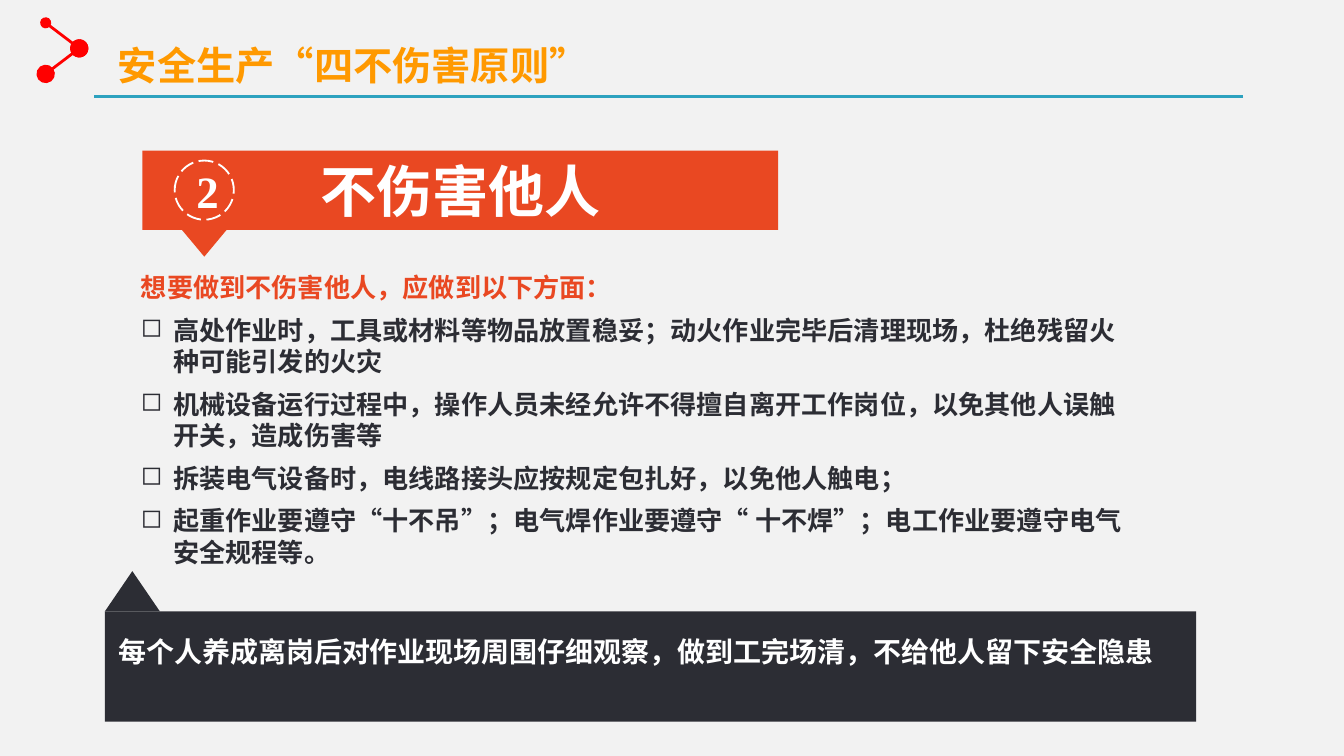
from lxml.etree import SubElement
from pptx import Presentation
from pptx.dml.color import RGBColor
from pptx.enum.dml import MSO_LINE
from pptx.enum.lang import MSO_LANGUAGE_ID as LANGUAGE
from pptx.enum.shapes import MSO_CONNECTOR, MSO_SHAPE as SHAPE
from pptx.enum.text import MSO_ANCHOR, MSO_AUTO_SIZE, PP_ALIGN
from pptx.oxml.ns import qn
from pptx.util import Inches, Pt

ORANGE = RGBColor(0xFF, 0x99, 0x00)
RED = RGBColor(0xFF, 0x00, 0x00)
VERMILION = RGBColor(0xE9, 0x48, 0x22)
CHARCOAL = RGBColor(0x2C, 0x2D, 0x34)
TEAL = RGBColor(0x2D, 0xA2, 0xBF)
WHITE = RGBColor(0xFF, 0xFF, 0xFF)
PALE = RGBColor(0xF2, 0xF2, 0xF2)

TITLE = "安全生产“四不伤害原则”"
NUMBER, HEADING = "2", "不伤害他人"
LEAD = "想要做到不伤害他人，应做到以下方面："
MEASURES = [
    "高处作业时，工具或材料等物品放置稳妥；动火作业完毕后清理现场，杜绝残留火种可能引发的火灾",
    "机械设备运行过程中，操作人员未经允许不得擅自离开工作岗位，以免其他人误触开关，造成伤害等",
    "拆装电气设备时，电线路接头应按规定包扎好，以免他人触电；",
    "起重作业要遵守“十不吊”；电气焊作业要遵守“ 十不焊”；电工作业要遵守电气安全规程等。",
]
REMINDER = "每个人养成离岗后对作业现场周围仔细观察，做到工完场清，不给他人留下安全隐患"

WIDTH = 10
HEIGHT = WIDTH * 9 / 16
LEFT = 0.78
BANNER = (1.06, 1.12, 4.73, 0.59)
FOOTER = (LEFT, 4.55, 8.12, 0.82)
BADGE_SIZE, BADGE_CENTER = 0.44, 1.52
POINTER_WIDTH, POINTER_HEIGHT = 0.35, 0.21
TAB_WIDTH, TAB_HEIGHT = 0.41, 0.3
MOLECULE = [(0.34, 0.17, "med"), (0.59, 0.36, "lg"), (0.34, 0.55, "lg")]


def add_line(slide, start, end, color):
    line = slide.shapes.add_connector(
        MSO_CONNECTOR.STRAIGHT, *map(Inches, (*start, *end)))
    line.line.color.rgb = color
    line.line.width = Pt(1.5)
    SubElement(line._element.spPr, qn("a:effectLst"))
    return line


def add_dots(line, sizes):
    """Put a round dot on each end of a line."""
    outline = line.line._get_or_add_ln()
    for tag, size in zip(("a:headEnd", "a:tailEnd"), sizes):
        SubElement(outline, qn(tag), type="oval", w=size, len=size)


def add_plain_shape(slide, kind, box, fill=None):
    shape = slide.shapes.add_shape(kind, *map(Inches, box))
    shape.shadow.inherit = False
    shape.line.fill.background()
    if fill is None:
        shape.fill.background()
    else:
        shape.fill.solid()
        shape.fill.fore_color.rgb = fill
    return shape


def write(paragraph, text, size, color, **layout):
    paragraph.text = text
    for name, value in layout.items():
        setattr(paragraph, name, value)
    font = paragraph.runs[0].font
    style = {"name": "Times New Roman", "size": Pt(size), "bold": True,
             "language_id": LANGUAGE.SIMPLIFIED_CHINESE}
    for name, value in style.items():
        setattr(font, name, value)
    font.color.rgb = color


def add_text_frame(slide, box):
    frame = slide.shapes.add_textbox(*map(Inches, box)).text_frame
    frame.word_wrap = True
    frame.auto_size = MSO_AUTO_SIZE.SHAPE_TO_FIT_TEXT
    return frame


def write_centered(shape, text, size, margin_left=0):
    frame = shape.text_frame
    frame.vertical_anchor = MSO_ANCHOR.MIDDLE
    frame.word_wrap = False
    frame.margin_left = Inches(margin_left)
    for side in ("top", "right", "bottom"):
        setattr(frame, f"margin_{side}", 0)
    write(frame.paragraphs[0], text, size, WHITE, alignment=PP_ALIGN.CENTER)


def add_bullet(paragraph, indent):
    properties = paragraph._p.get_or_add_pPr()
    properties.set("marL", str(indent))
    properties.set("indent", str(-indent))
    SubElement(properties, qn("a:buChar"), char="◻")


def add_header(slide):
    add_line(slide, (9.25, 0.72), (0.7, 0.72), TEAL)
    for (x1, y1, size1), (x2, y2, size2) in zip(MOLECULE, MOLECULE[1:]):
        add_dots(add_line(slide, (x1, y1), (x2, y2), RED), (size1, size2))
    frame = add_text_frame(slide, (LEFT, 0.08, 4.83, 0.63))
    write(frame.paragraphs[0], TITLE, 21, ORANGE, line_spacing=1.5)


def add_measures(slide):
    frame = add_text_frame(slide, (0.95, 1.97, 7.62, 2.32))
    write(frame.paragraphs[0], LEAD, 14, VERMILION)
    for measure in MEASURES:
        paragraph = frame.add_paragraph()
        add_bullet(paragraph, Inches(0.24))
        write(paragraph, measure, 14, CHARCOAL, space_before=Pt(6))


def add_footer(slide):
    left, top, width, _ = FOOTER
    add_plain_shape(slide, SHAPE.RECTANGLE, FOOTER, CHARCOAL)
    add_plain_shape(slide, SHAPE.ISOSCELES_TRIANGLE,
                    (left, top - TAB_HEIGHT, TAB_WIDTH, TAB_HEIGHT), CHARCOAL)
    frame = add_text_frame(slide, (left, top, width - 0.1, 0.48))
    write(frame.paragraphs[0], REMINDER, 15, WHITE, line_spacing=1.5)


def add_banner(slide):
    _, top, _, height = BANNER
    write_centered(add_plain_shape(slide, SHAPE.RECTANGLE, BANNER, VERMILION),
                   HEADING, 30)
    badge = add_plain_shape(
        slide, SHAPE.OVAL,
        (BADGE_CENTER - BADGE_SIZE / 2, top + (height - BADGE_SIZE) / 2,
         BADGE_SIZE, BADGE_SIZE))
    badge.line.color.rgb = WHITE
    badge.line.width = Pt(1)
    badge.line.dash_style = MSO_LINE.LONG_DASH
    write_centered(badge, NUMBER, 24, margin_left=0.05)
    pointer = add_plain_shape(
        slide, SHAPE.ISOSCELES_TRIANGLE,
        (BADGE_CENTER - POINTER_WIDTH / 2, top + height - 0.01,
         POINTER_WIDTH, POINTER_HEIGHT), VERMILION)
    pointer.rotation = 180


def main():
    presentation = Presentation()
    presentation.slide_width = Inches(WIDTH)
    presentation.slide_height = Inches(HEIGHT)
    slide = presentation.slides.add_slide(presentation.slide_layouts[6])
    slide.background.fill.solid()
    slide.background.fill.fore_color.rgb = PALE
    for add_part in (add_header, add_measures, add_footer, add_banner):
        add_part(slide)
    presentation.save("out.pptx")


if __name__ == "__main__":
    main()
